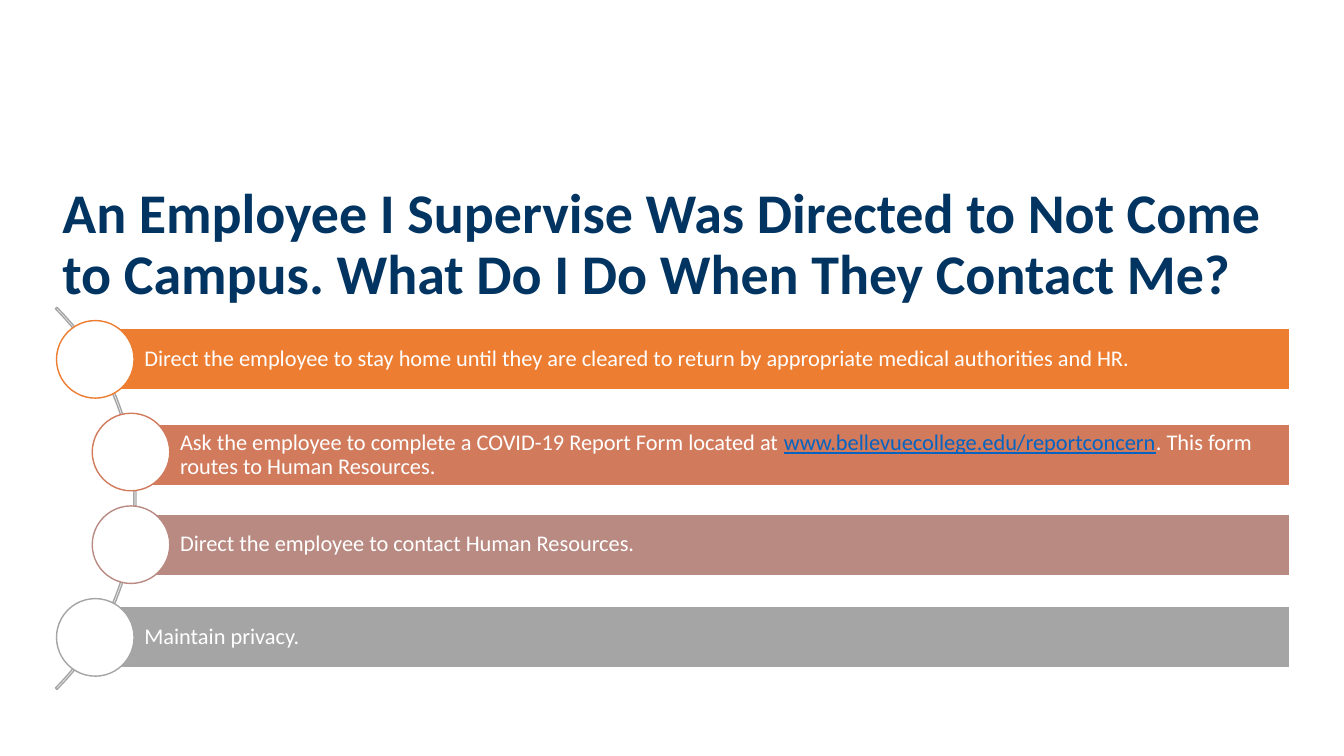
from pptx import Presentation
from pptx.dml.color import RGBColor
from pptx.enum.shapes import MSO_SHAPE
from pptx.enum.text import MSO_ANCHOR, MSO_AUTO_SIZE, PP_ALIGN
from pptx.util import Pt

NAVY = RGBColor(0x01, 0x34, 0x61)
WHITE = RGBColor(0xFF, 0xFF, 0xFF)
ORANGE = RGBColor(0xED, 0x7D, 0x31)
TERRACOTTA = RGBColor(0xD1, 0x7B, 0x5C)
ROSE = RGBColor(0xB9, 0x8A, 0x82)
GRAY = RGBColor(0xA5, 0xA5, 0xA5)
LINK_BLUE = RGBColor(0x05, 0x63, 0xC1)

FONT = "Calibri"
QUESTION = ("An Employee I Supervise Was Directed to Not Come to Campus. "
            "What Do I Do When They Contact Me?")
FORM_ADDRESS = "www.bellevuecollege.edu/reportconcern"

# Colour, circle indent, bar nudge and text runs of each step
STEPS = [
    (ORANGE, 0, 0, ["Direct the employee to stay home until they are cleared to "
                    "return by appropriate medical authorities and HR."]),
    (TERRACOTTA, 25.5, 2.4, ["Ask the employee to complete a COVID-19 Report Form located at ",
                             FORM_ADDRESS,
                             ". This form routes to Human Resources."]),
    (ROSE, 25.5, 0, ["Direct the employee to contact Human Resources."]),
    (GRAY, 0, 0, ["Maintain privacy."]),
]
CIRCLE = 55.4
BAR_HEIGHT = 43.8
STEP_PITCH = 66.2
ARC_SIZE = 386


def add_preset(slide, kind, left, top, width, height, line_color, fill_color=None):
    shape = slide.shapes.add_shape(kind, Pt(left), Pt(top), Pt(width), Pt(height))
    shape.shadow.inherit = False
    if fill_color is None:
        shape.fill.background()
    else:
        shape.fill.solid()
        shape.fill.fore_color.rgb = fill_color
    shape.line.color.rgb = line_color
    shape.line.width = Pt(1)
    return shape


def add_question(slide, left, top, width, height):
    title = slide.shapes.title
    title.left, title.top, title.width, title.height = map(Pt, (left, top, width, height))
    frame = title.text_frame
    frame.word_wrap = True
    frame.auto_size = MSO_AUTO_SIZE.NONE
    frame.vertical_anchor = MSO_ANCHOR.TOP
    frame.text = QUESTION
    question = frame.paragraphs[0]
    question.alignment = PP_ALIGN.LEFT
    question.line_spacing = 0.9
    question.space_before = Pt(0)
    question.font.name = FONT
    question.font.size = Pt(40)
    question.font.bold = True
    question.font.color.rgb = NAVY


def fill_step_text(bar, pieces):
    frame = bar.text_frame
    frame.word_wrap = True
    frame.vertical_anchor = MSO_ANCHOR.MIDDLE
    frame.margin_left = Pt(35)
    frame.margin_top = frame.margin_right = frame.margin_bottom = Pt(3)
    instruction = frame.paragraphs[0]
    instruction.alignment = PP_ALIGN.LEFT
    instruction.line_spacing = 0.9
    instruction.font.name = FONT
    instruction.font.size = Pt(16)
    for piece in pieces:
        run = instruction.add_run()
        run.text = piece
        is_address = piece == FORM_ADDRESS
        run.font.color.rgb = LINK_BLUE if is_address else WHITE
        if is_address:
            run.font.underline = True


def add_steps(slide, left, top, width, height):
    # Thin arc behind the circles, centred on the height of the list
    arc = add_preset(slide, MSO_SHAPE.BLOCK_ARC, left + CIRCLE + 1.4 - ARC_SIZE,
                     top + (height - ARC_SIZE) / 2, ARC_SIZE, ARC_SIZE, GRAY)
    for index, value in enumerate((189, 27, 0.004)):
        arc.adjustments[index] = value

    # Each bar starts at the centre of its circle and ends at the right edge
    for index, (color, indent, nudge, pieces) in enumerate(STEPS):
        circle_left = left + indent
        circle_top = top + index * STEP_PITCH
        bar_left = circle_left + CIRCLE / 2
        bar_top = circle_top + (CIRCLE - BAR_HEIGHT) / 2 + nudge
        bar = add_preset(slide, MSO_SHAPE.RECTANGLE, bar_left, bar_top,
                         left + width - bar_left, BAR_HEIGHT, WHITE, color)
        fill_step_text(bar, pieces)
        add_preset(slide, MSO_SHAPE.OVAL, circle_left, circle_top,
                   CIRCLE, CIRCLE, color, WHITE)


def main():
    deck = Presentation()
    deck.slide_width, deck.slide_height = Pt(960), Pt(540)
    slide = deck.slides.add_slide(deck.slide_layouts[5])
    add_question(slide, 37.4, 128.9, 889.2, 41)
    add_steps(slide, 40.4, 229, 880.5, 254)
    deck.save("out.pptx")


if __name__ == "__main__":
    main()
